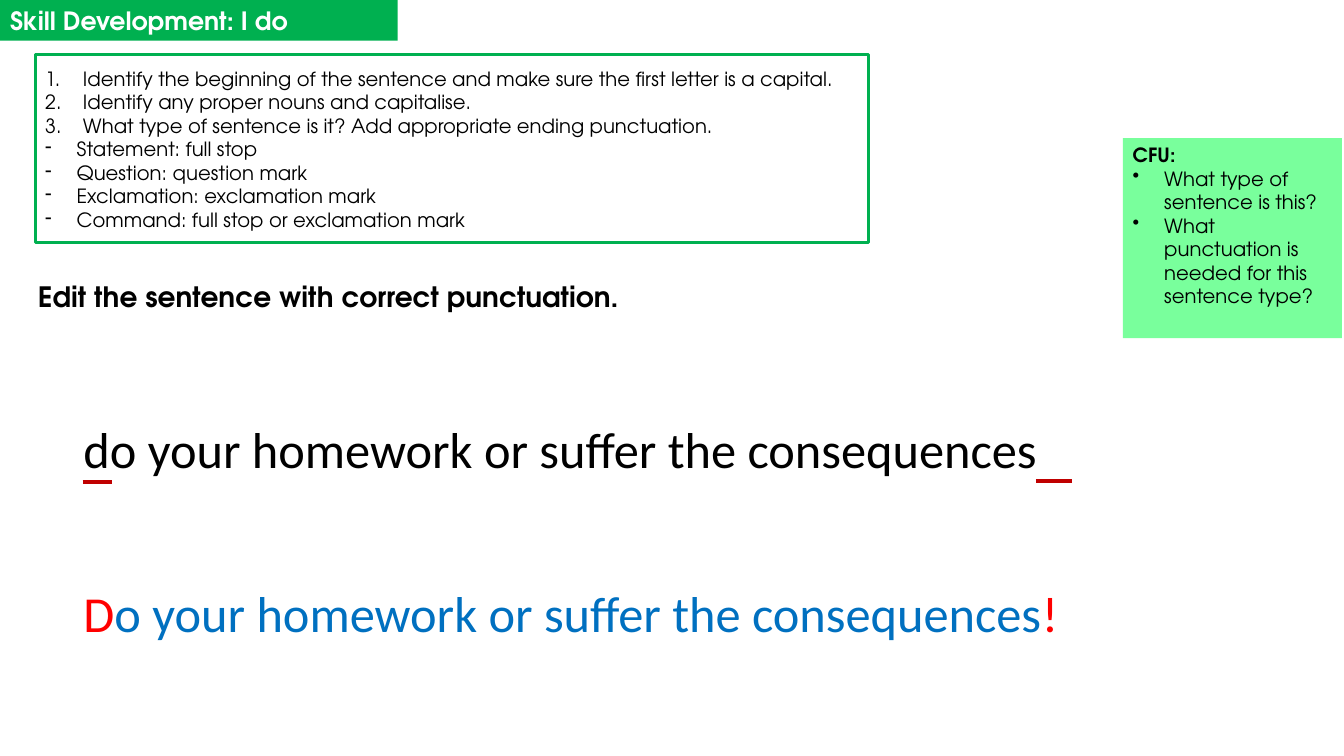
from dataclasses import dataclass
from typing import Optional

from lxml.etree import SubElement
from pptx import Presentation
from pptx.dml.color import RGBColor
from pptx.enum.shapes import MSO_CONNECTOR as Connector, MSO_SHAPE as Preset
from pptx.enum.text import MSO_ANCHOR as Anchor, MSO_AUTO_SIZE as AutoSize, PP_ALIGN as Align
from pptx.oxml.ns import qn
from pptx.util import Pt


@dataclass(frozen=True)
class Theme:
    heading_font: str = "TeX Gyre Adventor"
    sentence_font: str = "Calibri"
    black: str = "000000"
    white: str = "FFFFFF"
    green: str = "00B050"
    mint: str = "79FF9C"
    red: str = "FF0000"
    dark_red: str = "C00000"
    blue: str = "0070C0"
    body_size: float = 14
    banner_size: float = 18
    task_size: float = 20
    sentence_size: float = 36


THEME = Theme()


@dataclass(frozen=True)
class Box:
    left: float
    top: float
    width: float
    height: float

    def lengths(self) -> tuple:
        return Pt(self.left), Pt(self.top), Pt(self.width), Pt(self.height)


@dataclass(frozen=True)
class Style:
    size: float
    font: str = THEME.heading_font
    color: str = THEME.black
    bold: bool = False


@dataclass(frozen=True)
class Words:
    text: str
    style: Style


@dataclass(frozen=True)
class Marker:
    """A list marker; without a symbol the list is numbered."""
    indent: float
    symbol: Optional[str] = None


@dataclass(frozen=True)
class Line:
    words: tuple
    marker: Optional[Marker] = None
    spacing: float = 1.0


@dataclass(frozen=True)
class TextBlock:
    box: Box
    lines: tuple


@dataclass(frozen=True)
class Underline:
    left: float
    right: float
    y: float


BODY = Style(THEME.body_size)
BODY_BOLD = Style(THEME.body_size, bold=True)
BANNER = Style(THEME.banner_size, color=THEME.white, bold=True)
TASK = Style(THEME.task_size, bold=True)
UNEDITED = Style(THEME.sentence_size, THEME.sentence_font)
EDITED = Style(THEME.sentence_size, THEME.sentence_font, THEME.blue)
CORRECTION = Style(THEME.sentence_size, THEME.sentence_font, THEME.red)

NUMBER = Marker(27)
DASH = Marker(22.5, "-")
BULLET = Marker(22.5, "•")


def listed(marker: Marker, *items: str) -> tuple:
    return tuple(Line((Words(item, BODY),), marker) for item in items)


TITLE = TextBlock(Box(0, 0, 284, 29), (Line((Words("Skill Development: I do", BANNER),)),))
STEPS_FRAME = Box(25.2, 39, 595, 134.5)
STEPS = TextBlock(
    Box(25.2, 44, 595, 140),
    listed(
        NUMBER,
        "Identify the beginning of the sentence and make sure the first letter is a capital.",
        "Identify any proper nouns and capitalise.",
        "What type of sentence is it? Add appropriate ending punctuation.",
    ) + listed(
        DASH,
        "Statement: full stop",
        "Question: question mark",
        "Exclamation: exclamation mark",
        "Command: full stop or exclamation mark",
    ),
)
CFU = TextBlock(
    Box(802, 98.6, 156.5, 143),
    (Line((Words("CFU:", BODY_BOLD),)),) + listed(
        BULLET,
        "What type of sentence is this?",
        "What punctuation is needed for this sentence type?",
    ),
)
INSTRUCTION = TextBlock(
    Box(20, 199, 932, 37),
    (Line((Words("Edit the sentence with correct punctuation.", TASK),), spacing=0.9),),
)
QUESTION = TextBlock(
    Box(52.5, 295, 873, 51),
    (Line((Words("do your homework or suffer the consequences", UNEDITED),)),),
)
ANSWER = TextBlock(
    Box(52.5, 412.5, 732, 51),
    (Line((
        Words("D", CORRECTION),
        Words("o your homework or suffer the consequences", EDITED),
        Words("!", CORRECTION),
    )),),
)
UNDERLINES = (Underline(59, 80, 344.2), Underline(740, 766, 343.4))


def rgb(color: str) -> RGBColor:
    return RGBColor.from_string(color)


def add_marker(paragraph, marker: Marker) -> None:
    properties = paragraph._p.get_or_add_pPr()
    properties.set("marL", str(Pt(marker.indent)))
    properties.set("indent", str(-Pt(marker.indent)))
    if marker.symbol:
        SubElement(properties, qn("a:buChar")).set("char", marker.symbol)
    else:
        SubElement(properties, qn("a:buAutoNum")).set("type", "arabicPeriod")


def write(shape, lines: tuple) -> None:
    frame = shape.text_frame
    frame.word_wrap = True
    frame.auto_size = AutoSize.NONE
    frame.vertical_anchor = Anchor.TOP
    for index, line in enumerate(lines):
        paragraph = frame.add_paragraph() if index else frame.paragraphs[0]
        paragraph.alignment = Align.LEFT
        paragraph.line_spacing = line.spacing
        if line.marker:
            add_marker(paragraph, line.marker)
        for words in line.words:
            run = paragraph.add_run()
            run.text = words.text
            run.font.name = words.style.font
            run.font.size = Pt(words.style.size)
            run.font.bold = words.style.bold
            run.font.color.rgb = rgb(words.style.color)


def fill_title(slide, block: TextBlock, fill: str) -> None:
    title = slide.shapes.title
    title.left, title.top, title.width, title.height = block.box.lengths()
    title.fill.solid()
    title.fill.fore_color.rgb = rgb(fill)
    write(title, block.lines)


def add_text(slide, block: TextBlock) -> None:
    write(slide.shapes.add_textbox(*block.box.lengths()), block.lines)


def add_panel(slide, block: TextBlock, fill: str) -> None:
    panel = slide.shapes.add_shape(Preset.RECTANGLE, *block.box.lengths())
    panel.shadow.inherit = False
    panel.fill.solid()
    panel.fill.fore_color.rgb = rgb(fill)
    panel.line.fill.background()
    write(panel, block.lines)


def add_frame(slide, box: Box, color: str) -> None:
    frame = slide.shapes.add_shape(Preset.RECTANGLE, *box.lengths())
    frame.shadow.inherit = False
    frame.fill.background()
    frame.line.color.rgb = rgb(color)
    frame.line.width = Pt(2)


def add_underline(slide, mark: Underline) -> None:
    y = Pt(mark.y)
    line = slide.shapes.add_connector(Connector.STRAIGHT, Pt(mark.left), y, Pt(mark.right), y)
    line.line.color.rgb = rgb(THEME.dark_red)
    line.line.width = Pt(3)
    SubElement(line._element.spPr, qn("a:effectLst"))


def main() -> None:
    deck = Presentation()
    deck.slide_width, deck.slide_height = Pt(960), Pt(540)
    slide = deck.slides.add_slide(deck.slide_layouts.get_by_name("Title Only"))
    fill_title(slide, TITLE, THEME.green)
    for block in (INSTRUCTION, QUESTION, ANSWER):
        add_text(slide, block)
    for mark in UNDERLINES:
        add_underline(slide, mark)
    add_panel(slide, CFU, THEME.mint)
    add_frame(slide, STEPS_FRAME, THEME.green)
    add_text(slide, STEPS)
    deck.save("out.pptx")


if __name__ == "__main__":
    main()
